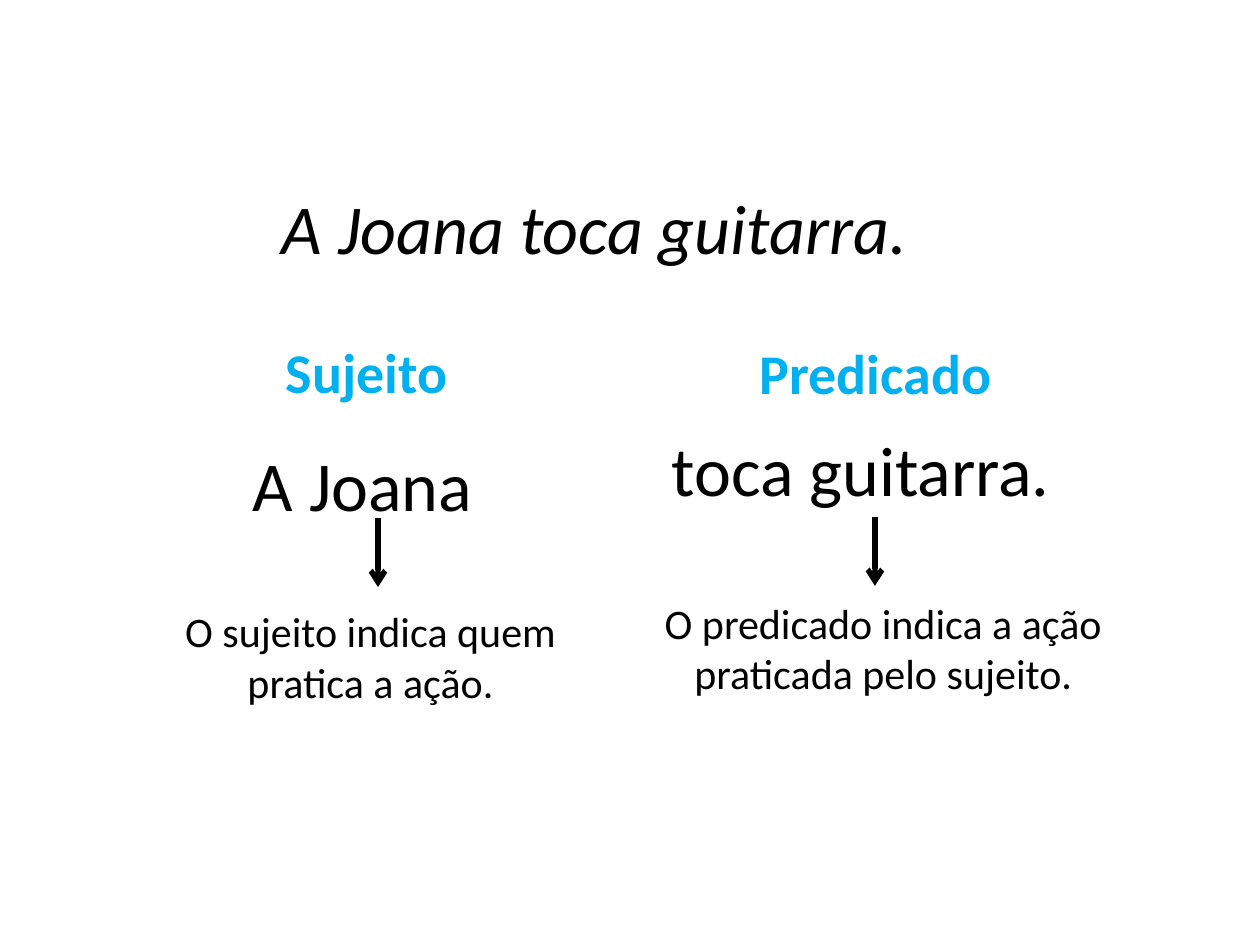
"""Build a slide that splits a Portuguese sentence into subject and predicate."""
import dataclasses

import lxml.etree
import pptx
import pptx.dml.color
import pptx.enum.shapes
import pptx.enum.text
import pptx.oxml.ns
import pptx.util


@dataclasses.dataclass(frozen=True)
class Theme:
    font: str = "Calibri"
    ink: str = "000000"
    accent: str = "00B0F0"
    sentence_size: int = 40
    heading_size: int = 32
    body_size: int = 24
    arrow_width: int = 3


class SlideBuilder:
    def __init__(self, slide, theme):
        self.slide = slide
        self.theme = theme

    def text(self, content, box, size, color=None, bold=False, italic=False,
             centered=True, middle=False, wrap=True, line_spacing=None):
        shape = self.slide.shapes.add_textbox(*map(pptx.util.Pt, box))
        frame = shape.text_frame
        frame.text = content
        frame.word_wrap = wrap
        anchors = pptx.enum.text.MSO_ANCHOR
        frame.vertical_anchor = anchors.MIDDLE if middle else anchors.TOP
        paragraph = frame.paragraphs[0]
        alignments = pptx.enum.text.PP_ALIGN
        paragraph.alignment = alignments.CENTER if centered else alignments.LEFT
        if line_spacing:
            paragraph.line_spacing = pptx.util.Pt(line_spacing)
        font = paragraph.runs[0].font
        font.name = self.theme.font
        font.size = pptx.util.Pt(size)
        font.bold = bold
        font.italic = italic
        font.color.rgb = pptx.dml.color.RGBColor.from_string(color or self.theme.ink)

    def sentence(self, content, box, line_spacing, **style):
        self.text(content, box, self.theme.sentence_size, middle=True,
                  line_spacing=line_spacing, **style)

    def heading(self, content, box):
        self.text(content, box, self.theme.heading_size, self.theme.accent, bold=True)

    def explanation(self, content, box):
        self.text(content, box, self.theme.body_size)

    def arrow(self, *ends):
        connector = self.slide.shapes.add_connector(
            pptx.enum.shapes.MSO_CONNECTOR.STRAIGHT, *map(pptx.util.Pt, ends))
        line = connector.line
        line.width = pptx.util.Pt(self.theme.arrow_width)
        line.color.rgb = pptx.dml.color.RGBColor.from_string(self.theme.ink)
        qualified_name = pptx.oxml.ns.qn
        properties = connector._element.spPr
        outline = properties.find(qualified_name("a:ln"))
        lxml.etree.SubElement(outline, qualified_name("a:tailEnd"), type="arrow")
        lxml.etree.SubElement(properties, qualified_name("a:effectLst"))


def main():
    presentation = pptx.Presentation()
    presentation.slide_width = pptx.util.Pt(720)
    presentation.slide_height = pptx.util.Pt(540)
    slide = presentation.slides.add_slide(presentation.slide_layouts[6])
    builder = SlideBuilder(slide, Theme())

    builder.sentence("A Joana toca guitarra.", (154, 84.2, 411, 57), 81,
                     italic=True, centered=False, wrap=False)

    builder.heading("Sujeito", (103.7, 189.4, 211.7, 46))
    builder.sentence("A Joana", (92.2, 239.8, 229.7, 39.6), 81)
    builder.arrow(216, 295.9, 216, 335.5)
    builder.explanation("O sujeito indica quem pratica a ação.",
                        (72.7, 342.7, 278, 65.5))

    builder.heading("Predicado", (394.5, 190, 211.7, 46))
    builder.sentence("toca guitarra.", (376.6, 241.2, 269.3, 57), 44,
                     centered=False, wrap=False)
    builder.arrow(500, 295.2, 500, 334.8)
    builder.explanation("O predicado indica a ação praticada pelo sujeito.",
                        (360, 337.7, 289.4, 65.5))

    presentation.save("out.pptx")


if __name__ == "__main__":
    main()
